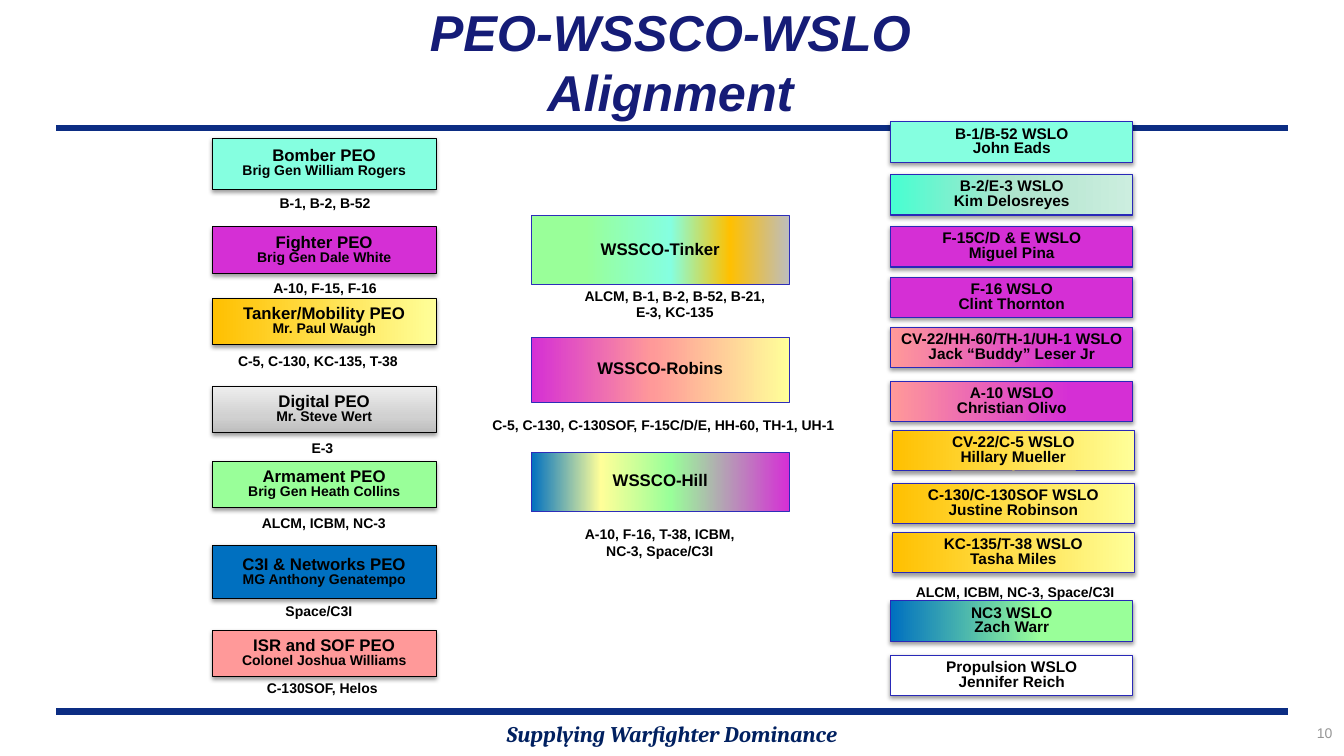
from dataclasses import dataclass
from typing import Optional

from lxml.etree import SubElement
from pptx import Presentation
from pptx.dml.color import RGBColor
from pptx.enum.shapes import MSO_CONNECTOR, MSO_SHAPE
from pptx.enum.text import MSO_ANCHOR, PP_ALIGN
from pptx.oxml.ns import qn
from pptx.util import Cm, Pt

BLACK = "000000"
NAVY = "0C2D83"
PEO_LINE = BLACK
WSSCO_LINE = "2D2DB9"
WSLO_LINE = "2929B8"
AQUA, MAGENTA, GOLD, YELLOW = "85FFE0", "D52FD5", "FFC000", "FFFF99"
GREEN, BLUE, PINK, GRAY, WHITE = "99FF99", "0070C0", "FF9999", "BDBDBD", "FFFFFF"

PEO_LEFT, PEO_WIDTH = 5.35, 5.64
WSSCO_LEFT, WSSCO_WIDTH = 13.39, 6.5
WSLO_LEFT, WSLO_WIDTH, WSLO_HEIGHT = 22.45, 6.1, 1.02


@dataclass
class Fill:
    stops: list[tuple[int, str]]
    angle: int = 0


@dataclass
class Box:
    lines: list[str]
    top: float
    fill: Fill
    height: float = 1.17
    shift: float = 0


@dataclass
class Caption:
    lines: list[str]
    left: float
    top: float
    width: float


def solid(color: str) -> Fill:
    return Fill([(0, color)])


TANKER = Fill([(0, GOLD), (100, YELLOW)])
HELICOPTER = Fill([(0, PINK), (74, MAGENTA), (100, MAGENTA)])

PEOS = [
    Box(["Bomber PEO", "Brig Gen William Rogers"], 3.48, solid(AQUA), 1.3),
    Box(["Fighter PEO", "Brig Gen Dale White"], 5.72, solid(MAGENTA)),
    Box(["Tanker/Mobility PEO", "Mr. Paul Waugh"], 7.52, TANKER),
    Box(["Digital PEO", "Mr. Steve Wert"], 9.73,
        Fill([(0, "EEEEEE"), (65, "D1D1D1"), (100, GRAY)], 90)),
    Box(["Armament PEO", "Brig Gen Heath Collins"], 11.63, solid(GREEN)),
    Box(["C3I & Networks PEO", "MG Anthony Genatempo"], 13.74, solid(BLUE), 1.35),
    Box(["ISR and SOF PEO", "Colonel Joshua Williams"], 15.88, solid(PINK)),
]

WSSCOS = [
    Box(["WSSCO-Tinker"], 5.44,
        Fill([(0, GREEN), (21, GREEN), (54, AQUA), (77, GOLD), (100, GRAY)]), 1.73),
    Box(["WSSCO-Robins"], 8.51, Fill([(0, MAGENTA), (47, PINK), (100, YELLOW)]), 1.63),
    Box(["WSSCO-Hill"], 11.4,
        Fill([(0, BLUE), (27, YELLOW), (54, GREEN), (100, MAGENTA)]), 1.5),
]

WSLOS = [
    Box(["B-1/B-52 WSLO", "John Eads"], 3.07, solid(AQUA), WSLO_HEIGHT),
    Box(["B-2/E-3 WSLO", "Kim Delosreyes"], 4.4,
        Fill([(0, "47FFD1"), (48, "ADE3CC"), (100, "CCEEDF")]), WSLO_HEIGHT),
    Box(["F-15C/D & E WSLO", "Miguel Pina"], 5.71, solid(MAGENTA), WSLO_HEIGHT),
    Box(["F-16 WSLO", "Clint Thornton"], 6.99, solid(MAGENTA), WSLO_HEIGHT),
    Box(["CV-22/HH-60/TH-1/UH-1 WSLO", "Jack “Buddy” Leser Jr"], 8.25,
        HELICOPTER, WSLO_HEIGHT),
    Box(["A-10 WSLO", "Christian Olivo"], 9.61, HELICOPTER, WSLO_HEIGHT),
    Box(["CV-22/C-5 WSLO", "Hillary Mueller"], 10.85, TANKER, WSLO_HEIGHT, 0.04),
    Box(["C-130/C-130SOF WSLO", "Justine Robinson"], 12.18, TANKER, WSLO_HEIGHT, 0.04),
    Box(["KC-135/T-38 WSLO", "Tasha Miles"], 13.42, TANKER, WSLO_HEIGHT, 0.04),
    Box(["NC3 WSLO", "Zach Warr"], 15.14,
        Fill([(0, BLUE), (62, GREEN), (100, GREEN)]), WSLO_HEIGHT),
    Box(["Propulsion WSLO", "Jennifer Reich"], 16.51, solid(WHITE), WSLO_HEIGHT),
]

CAPTIONS = [
    Caption(["B-1, B-2, B-52"], 6.78, 4.78, 2.82),
    Caption(["A-10, F-15, F-16"], 6.63, 6.93, 3.12),
    Caption(["C-5, C-130, KC-135, T-38"], 5.71, 8.76, 4.6),
    Caption(["E-3"], 7.59, 10.95, 1.07),
    Caption(["ALCM, ICBM, NC-3"], 6.32, 12.83, 3.68),
    Caption(["Space/C3I"], 6.93, 15.05, 2.21),
    Caption(["C-130SOF, Helos"], 6.43, 17.01, 3.38),
    Caption(["ALCM, B-1, B-2, B-52, B-21,", "E-3, KC-135"], 14.45, 7.11, 5.11),
    Caption(["C-5, C-130, C-130SOF, F-15C/D/E, HH-60, TH-1, UH-1"], 12.09, 10.36, 9.25),
    Caption(["A-10, F-16, T-38, ICBM,", "NC-3, Space/C3I"], 14.4, 13.11, 4.45),
    Caption(["ALCM, ICBM, NC-3, Space/C3I"], 22.43, 14.58, 6.3),
]


def rgb(color: str) -> RGBColor:
    return RGBColor.from_string(color)


def write_text(shape, lines: list[str], *, sizes: list[float], color: str = BLACK,
               font: str = "Arial", bold: bool = True, italic: bool = False,
               align=PP_ALIGN.CENTER, anchor=MSO_ANCHOR.TOP,
               spacing: Optional[float] = None, wrap: bool = False) -> None:
    frame = shape.text_frame
    frame.word_wrap = wrap
    frame.vertical_anchor = anchor
    frame.text = "\n".join(lines)
    for paragraph, size in zip(frame.paragraphs, sizes):
        paragraph.alignment = align
        if spacing is not None:
            paragraph.line_spacing = spacing
        for run in paragraph.runs:
            run.font.name = font
            run.font.size = Pt(size)
            run.font.bold = bold
            run.font.italic = italic
            run.font.color.rgb = rgb(color)


def apply_fill(shape, fill: Fill) -> None:
    if len(fill.stops) == 1:
        shape.fill.solid()
        shape.fill.fore_color.rgb = rgb(fill.stops[0][1])
        return
    shape.fill.gradient()
    shape.fill.gradient_angle = -fill.angle % 360
    stop_list = shape._element.spPr.find(qn("a:gradFill")).find(qn("a:gsLst"))
    for old_stop in list(stop_list):
        stop_list.remove(old_stop)
    for position, color in fill.stops:
        stop = SubElement(stop_list, qn("a:gs"), pos=str(position * 1000))
        SubElement(stop, qn("a:srgbClr"), val=color)


def add_soft_shadow(shape) -> None:
    effects = shape._element.spPr.find(qn("a:effectLst"))
    shadow = SubElement(effects, qn("a:outerShdw"), blurRad="40000", dist="20000",
                        dir="5400000", rotWithShape="0")
    color = SubElement(shadow, qn("a:srgbClr"), val=BLACK)
    SubElement(color, qn("a:alpha"), val="38000")


def draw_box(slide, box: Box, left: float, width: float, line: str,
             sizes: list[float], shadow: bool = True) -> None:
    shape = slide.shapes.add_shape(MSO_SHAPE.RECTANGLE, Cm(left + box.shift), Cm(box.top),
                                   Cm(width), Cm(box.height))
    shape.shadow.inherit = False
    apply_fill(shape, box.fill)
    shape.line.color.rgb = rgb(line)
    shape.line.width = Pt(0.75)
    if shadow:
        add_soft_shadow(shape)
    write_text(shape, box.lines, sizes=sizes, anchor=MSO_ANCHOR.MIDDLE, spacing=0.8)


def draw_rule(slide, top: float) -> None:
    rule = slide.shapes.add_connector(MSO_CONNECTOR.STRAIGHT, Cm(1.42), Cm(top),
                                      Cm(32.46), Cm(top))
    rule.line.color.rgb = rgb(NAVY)
    rule.line.width = Pt(4.5)
    SubElement(rule._element.spPr, qn("a:effectLst"))


def draw_text(slide, caption: Caption, height: float = 0.69, **text_format) -> None:
    shape = slide.shapes.add_textbox(Cm(caption.left), Cm(caption.top),
                                     Cm(caption.width), Cm(height))
    write_text(shape, caption.lines, **text_format)


def main() -> None:
    presentation = Presentation()
    presentation.slide_width = Cm(33.87)
    presentation.slide_height = Cm(19.05)
    slide = presentation.slides.add_slide(presentation.slide_layouts[6])

    for top in (17.93, 3.23):
        draw_rule(slide, top)
    draw_text(slide, Caption(["Supplying Warfighter Dominance"], 0, 18.03, 33.87), 0.94,
              sizes=[16], font="Cambria", color="002060", italic=True, wrap=True)
    draw_text(slide, Caption(["PEO-WSSCO-WSLO Alignment"], 7.49, 0.2, 18.82), 2.69,
              sizes=[36], color="151C77", italic=True, wrap=True,
              anchor=MSO_ANCHOR.MIDDLE)
    draw_text(slide, Caption(["10"], 29.59, 18.14, 4.24), 0.84,
              sizes=[10], color="969696", bold=False, align=PP_ALIGN.RIGHT, wrap=True)

    for box in PEOS:
        draw_box(slide, box, PEO_LEFT, PEO_WIDTH, PEO_LINE, [12, 10])
    for box in WSSCOS:
        draw_box(slide, box, WSSCO_LEFT, WSSCO_WIDTH, WSSCO_LINE, [12], shadow=False)
    for box in WSLOS:
        draw_box(slide, box, WSLO_LEFT, WSLO_WIDTH, WSLO_LINE, [11, 11])
    for caption in CAPTIONS:
        draw_text(slide, caption, 0.69 if len(caption.lines) == 1 else 1.12, sizes=[10, 10])

    presentation.save("out.pptx")


if __name__ == "__main__":
    main()
